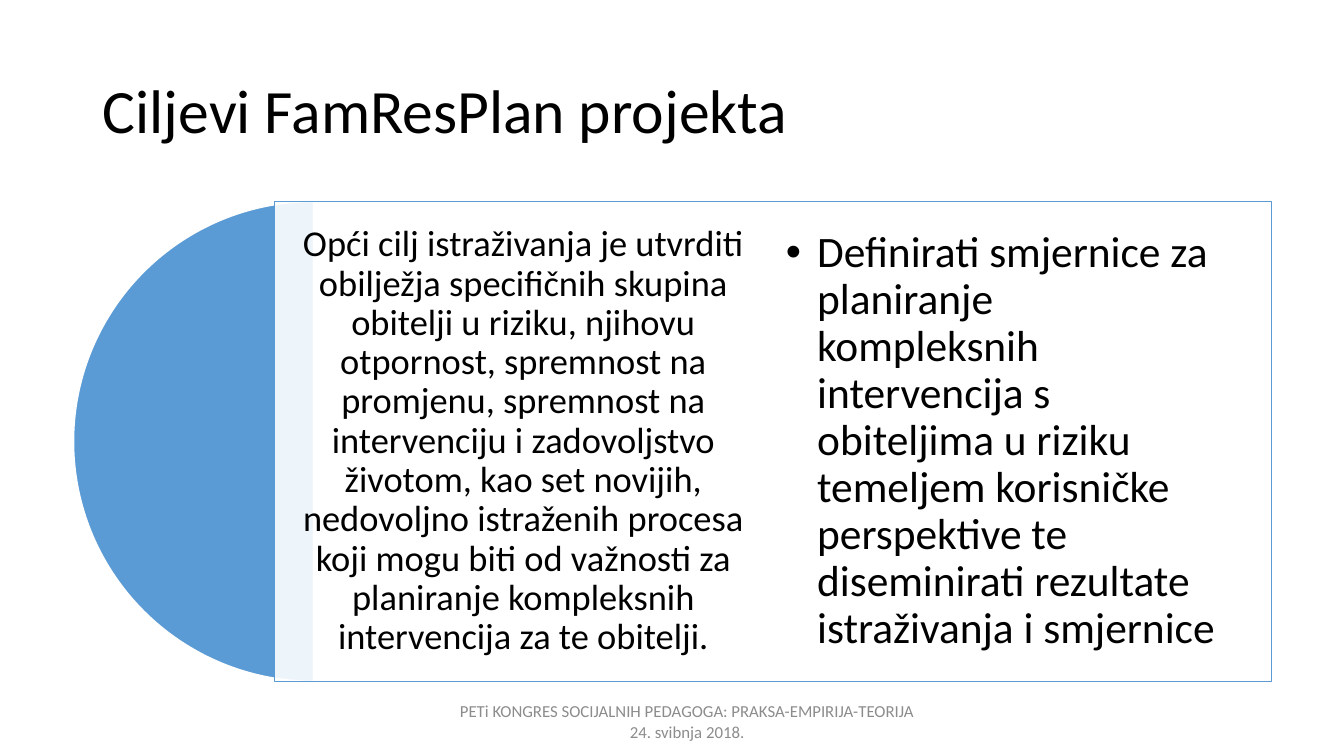
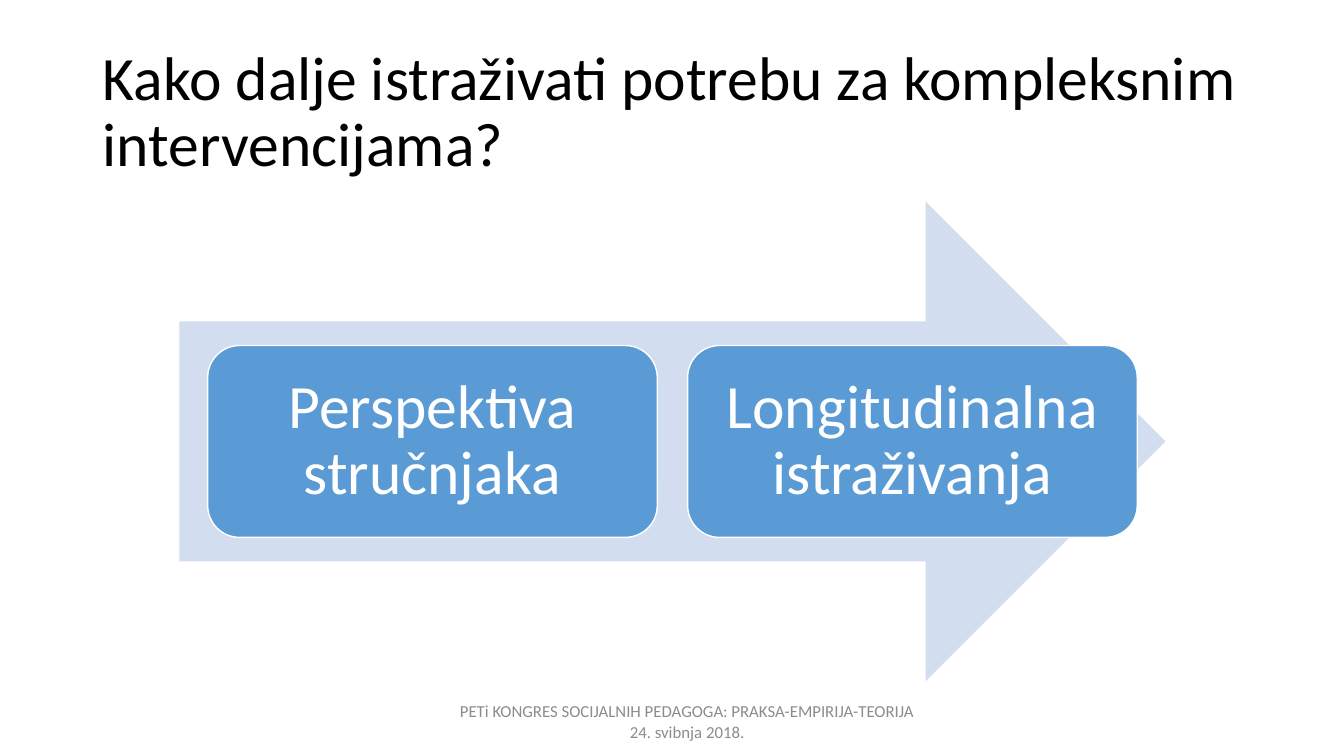
from pptx import Presentation
from pptx.dml.color import RGBColor
from pptx.enum.shapes import MSO_SHAPE as Preset
from pptx.enum.text import MSO_ANCHOR as Anchor, MSO_AUTO_SIZE as AutoSize, PP_ALIGN as Align
from pptx.oxml.ns import qn
from pptx.util import Inches, Pt
from lxml.etree import SubElement

BLACK = RGBColor(0x00, 0x00, 0x00)
WHITE = RGBColor(0xFF, 0xFF, 0xFF)
BLUE = RGBColor(0x5B, 0x9B, 0xD5)
PALE_BLUE = RGBColor(0xD2, 0xDE, 0xEF)
GREY = RGBColor(0x8C, 0x8C, 0x8C)
FONT = "Calibri"

TITLE_BOX = (0.92, 0.4, 11.5, 1.45)
FOOTER_BOX = (4.42, 6.96, 4.79, 0.39)
GOALS_BOX = (0.73, 2, 11.88, 4.76)
ARROW_BOX = (1.78, 2, 9.78, 4.76)

FOOTER = "PETi KONGRES SOCIJALNIH PEDAGOGA: PRAKSA-EMPIRIJA-TEORIJA 24. svibnja 2018."
GENERAL_GOAL = (
    "Opći cilj istraživanja je utvrditi obilježja specifičnih skupina obitelji u riziku, "
    "njihovu otpornost, spremnost na promjenu, spremnost na intervenciju i zadovoljstvo "
    "životom, kao set novijih, nedovoljno istraženih procesa koji mogu biti od važnosti za "
    "planiranje kompleksnih intervencija za te obitelji."
)
GUIDELINES_GOAL = (
    "Definirati smjernice za planiranje kompleksnih intervencija s obiteljima u riziku "
    "temeljem korisničke perspektive te diseminirati rezultate istraživanja i smjernice"
)


def place(shape, box):
    shape.left, shape.top, shape.width, shape.height = map(Inches, box)


def write(shape, text, size, color, align=Align.LEFT, spacing=0.9, inset=None):
    frame = shape.text_frame
    frame.word_wrap = True
    frame.auto_size = AutoSize.NONE
    frame.vertical_anchor = Anchor.MIDDLE
    if inset is not None:
        frame.margin_left = frame.margin_right = Inches(inset)
        frame.margin_top = frame.margin_bottom = Inches(inset)
    para = frame.paragraphs[0]
    para.alignment = align
    para.line_spacing = spacing
    para.space_before = Pt(0)
    span = para.add_run()
    span.text = text
    span.font.name = FONT
    span.font.size = Pt(size)
    span.font.color.rgb = color
    return para


def add_text(page, box, *args, **style):
    write(page.shapes.add_textbox(*map(Inches, box)), *args, **style)


def add_preset(page, preset, box, fill, line=None):
    shape = page.shapes.add_shape(preset, *map(Inches, box))
    shape.shadow.inherit = False
    shape.fill.solid()
    shape.fill.fore_color.rgb = fill
    if line is None:
        shape.line.fill.background()
    else:
        shape.line.color.rgb = line
        shape.line.width = Pt(1)
    return shape


def add_page(deck, layout, title):
    page = deck.slides.add_slide(deck.slide_layouts.get_by_name(layout))
    place(page.shapes.title, TITLE_BOX)
    write(page.shapes.title, title, 44, BLACK)
    add_text(page, FOOTER_BOX, FOOTER, 12, GREY, align=Align.CENTER, spacing=1.0)
    return page


def add_goals(page, box):
    left, top, width, height = box
    panel_left = left + 1.99
    panel_width = width - 1.99
    column = panel_width / 2

    half_disc = add_preset(page, Preset.PIE, (left, top, height, height), BLUE, WHITE)
    half_disc.adjustments[0] = 54
    half_disc.adjustments[1] = 162

    panel = add_preset(page, Preset.RECTANGLE, (panel_left, top, panel_width, height), WHITE, BLUE)
    fill_color = panel.element.spPr.find(qn("a:solidFill")).find(qn("a:srgbClr"))
    SubElement(fill_color, qn("a:alpha")).set("val", "90000")

    add_text(page, (panel_left, top, column, height), GENERAL_GOAL, 26, BLACK,
             align=Align.CENTER, inset=0.11)

    body = page.placeholders[1]
    body.element.getparent().append(body.element)
    place(body, (panel_left + column, top, 4.56, height))
    para = write(body, GUIDELINES_GOAL, 31, BLACK, inset=0.13)
    indents = para._p.get_or_add_pPr()
    indents.set("marL", str(Inches(0.31)))
    indents.set("indent", str(-Inches(0.31)))


def add_arrow_steps(page, box, steps):
    left, top, width, height = box
    add_preset(page, Preset.RIGHT_ARROW, box, PALE_BLUE)
    margin, gap = 0.28, 0.3
    step_width = (width - 2 * margin - gap * (len(steps) - 1)) / len(steps)
    step_height = height * 0.4
    step_top = top + (height - step_height) / 2
    for index, text in enumerate(steps):
        step_left = left + margin + index * (step_width + gap)
        step = add_preset(page, Preset.ROUNDED_RECTANGLE,
                          (step_left, step_top, step_width, step_height), BLUE, WHITE)
        write(step, text, 44, WHITE, align=Align.CENTER, inset=0.27)


def main():
    deck = Presentation()
    deck.slide_width = Inches(13.33)
    deck.slide_height = Inches(7.5)

    goals = add_page(deck, "Title and Content", "Ciljevi FamResPlan projekta")
    add_goals(goals, GOALS_BOX)

    outlook = add_page(deck, "Title Only",
                       "Kako dalje istraživati potrebu za kompleksnim intervencijama?")
    add_arrow_steps(outlook, ARROW_BOX, ["Perspektiva stručnjaka", "Longitudinalna istraživanja"])

    deck.save("out.pptx")


if __name__ == "__main__":
    main()
